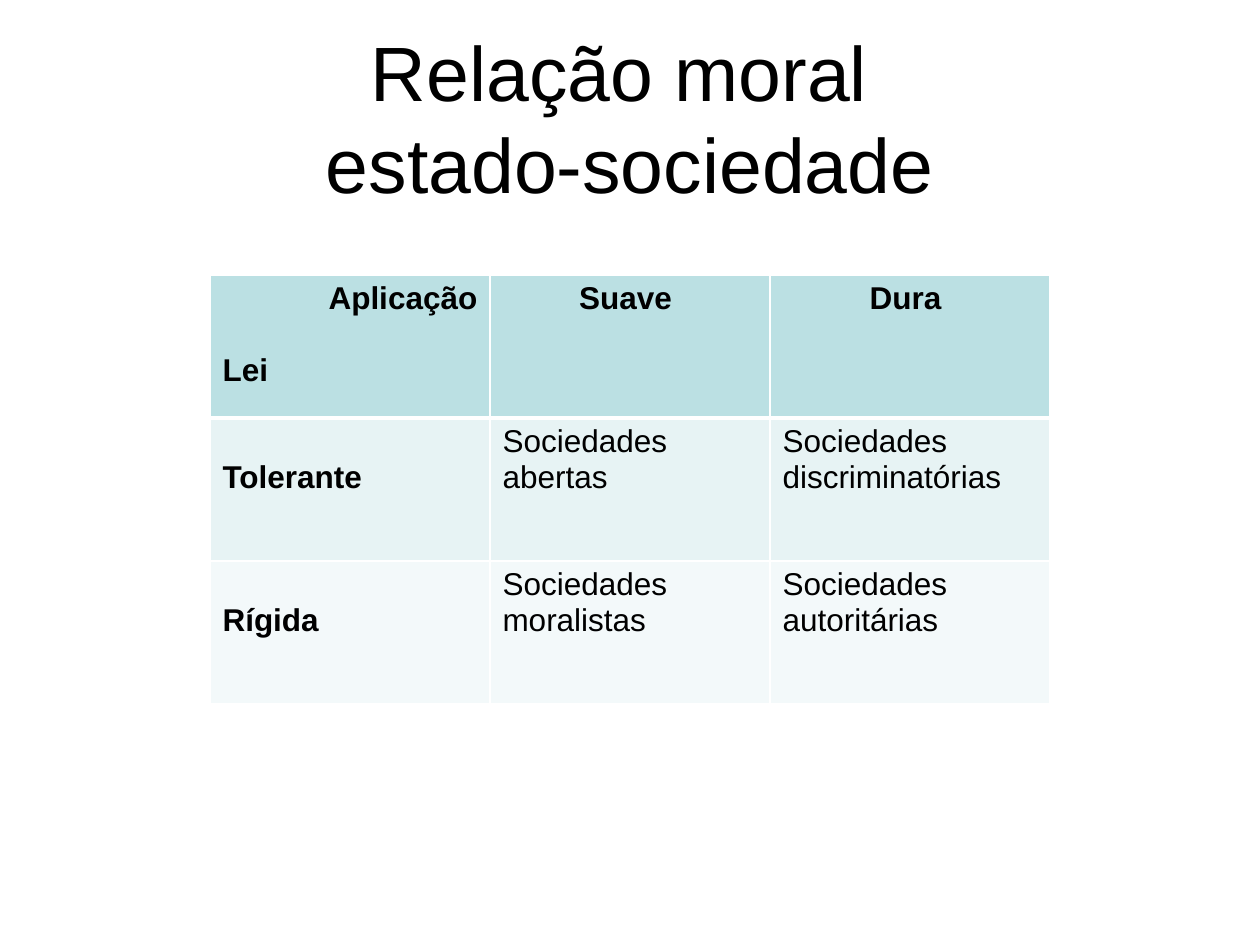
from lxml.etree import SubElement
from pptx import Presentation
from pptx.dml.color import RGBColor
from pptx.enum.text import MSO_ANCHOR as Anchor, MSO_AUTO_SIZE as AutoSize, PP_ALIGN as Align
from pptx.oxml.ns import qn
from pptx.util import Pt

SCALE = 914400 / 126
BLACK = RGBColor(0x00, 0x00, 0x00)
WHITE = RGBColor(0xFF, 0xFF, 0xFF)
HEADER = RGBColor(0xBB, 0xE0, 0xE3)
ROW_FILLS = (HEADER, RGBColor(0xE7, 0xF3, 0xF4), RGBColor(0xF3, 0xF9, 0xFA))
LINE_DROP = 36
ROWS = (
    ("Aplicação\nLei", "Suave ", "Dura "),
    ("Tolerante", "Sociedades abertas", "Sociedades discriminatórias"),
    ("Rígida", "Sociedades moralistas", "Sociedades autoritárias"),
)


def px(length):
    """Turn pixels into EMU."""
    return round(length * SCALE)


def apply(target, values):
    """Set each attribute of the target from a dict."""
    for key, value in values.items():
        setattr(target, key, value)


def format_text(paragraph, size, bold, align):
    """Give a paragraph its font and alignment."""
    paragraph.alignment = align
    apply(paragraph.font, {"name": "Arial", "size": Pt(size), "bold": bold})
    paragraph.font.color.rgb = BLACK


def add_borders(cell, widths):
    """Draw white cell borders with a width in points for each side."""
    properties = cell._tc.get_or_add_tcPr()
    for side, width in widths.items():
        line = SubElement(properties, qn(f"a:ln{side}"), w=str(Pt(width)))
        fill = SubElement(line, qn("a:solidFill"))
        SubElement(fill, qn("a:srgbClr"), val=str(WHITE))


def place_title(slide, left, top, width, height):
    """Fill the title placeholder."""
    title = slide.shapes.title
    apply(title, {"left": px(left), "top": px(top), "width": px(width), "height": px(height)})
    heading = title.text_frame
    heading.text = "Relação moral \vestado-sociedade"
    apply(heading, {"word_wrap": True, "auto_size": AutoSize.NONE,
                    "vertical_anchor": Anchor.MIDDLE})
    format_text(heading.paragraphs[0], 44, False, Align.CENTER)


def place_matrix(slide, left, top, width, height):
    """Build the table of law against its application."""
    matrix = slide.shapes.add_table(
        len(ROWS), len(ROWS[0]), px(left), px(top), px(width), px(height)).table
    for row, texts in enumerate(ROWS):
        for column, text in enumerate(texts):
            cell = matrix.cell(row, column)
            is_header, is_label = row == 0, column == 0
            add_borders(cell, {"L": 1, "R": 1, "T": 3 if row == 1 else 1,
                               "B": 3 if is_header else 1})
            cell.fill.solid()
            cell.fill.fore_color.rgb = ROW_FILLS[row]
            cell.text = text
            for paragraph in cell.text_frame.paragraphs:
                align = Align.CENTER if is_header and not is_label else Align.LEFT
                format_text(paragraph, 18, is_header or is_label, align)
            if is_label and not is_header:
                cell.margin_top = px(6 + LINE_DROP)
    application, law = matrix.cell(0, 0).text_frame.paragraphs
    application.alignment = Align.RIGHT
    law.space_before = px(LINE_DROP)


def main():
    """Build and save the slide."""
    deck = Presentation()
    apply(deck, {"slide_width": px(1260), "slide_height": px(945)})
    slide = deck.slides.add_slide(deck.slide_layouts[5])
    place_title(slide, 63, 38, 1134, 158)
    place_matrix(slide, 210, 275, 840, 429)
    deck.save("out.pptx")


if __name__ == "__main__":
    main()
